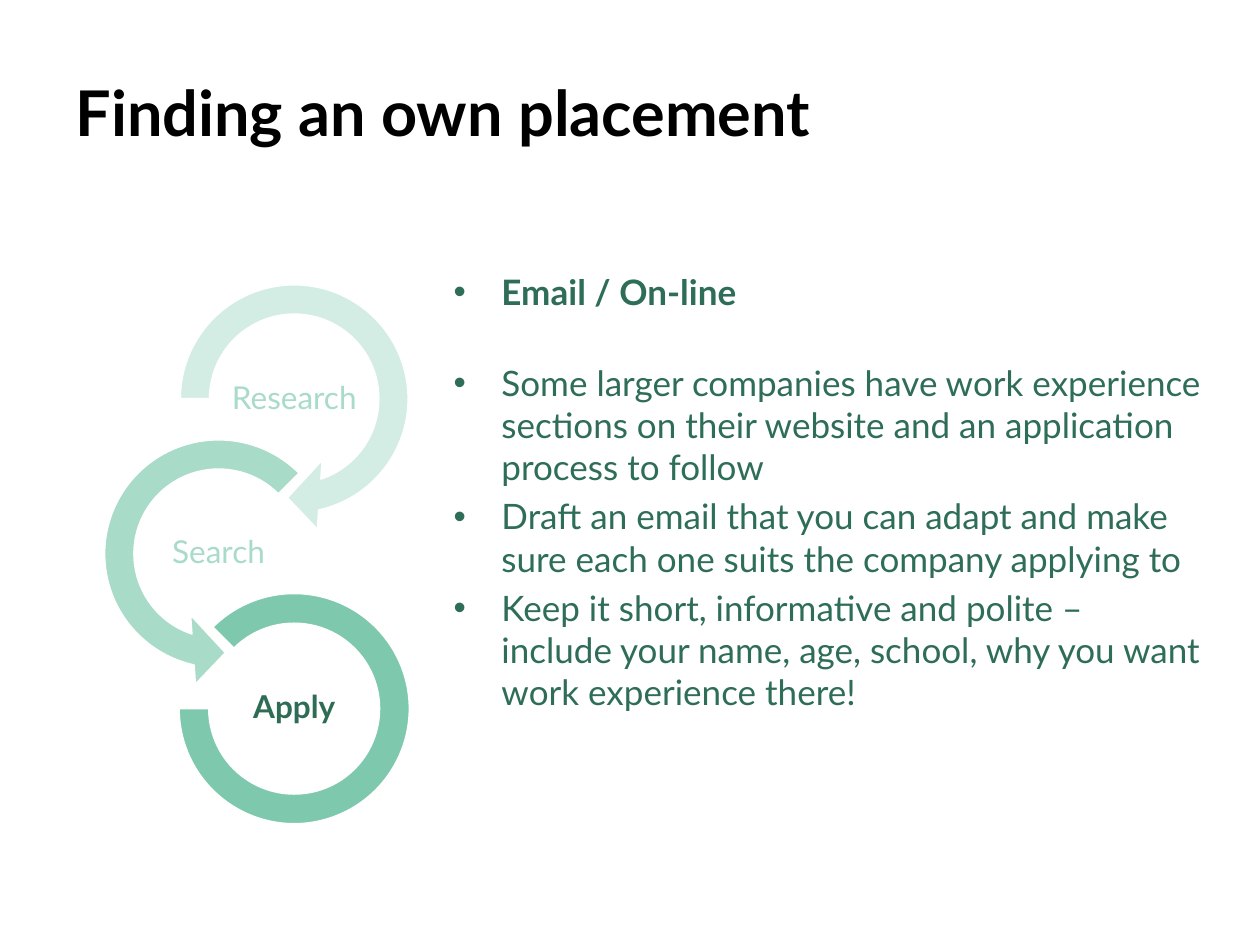
from dataclasses import dataclass

from pptx import Presentation
from pptx.dml.color import RGBColor
from pptx.enum.shapes import MSO_SHAPE
from pptx.enum.text import MSO_ANCHOR, MSO_AUTO_SIZE, PP_ALIGN
from pptx.util import Inches, Pt


@dataclass(frozen=True)
class Theme:
    font: str = "Lato"
    black: str = "000000"
    white: str = "FFFFFF"
    pale: str = "D4EDE4"
    light: str = "A9DBC9"
    medium: str = "7EC9AE"
    label: str = "2E6C56"
    body: str = "2E6D57"
    title_size: int = 36
    body_size: int = 20
    label_size: int = 18


@dataclass(frozen=True)
class Box:
    """A rectangle in inches."""
    left: float
    top: float
    width: float
    height: float

    def lengths(self):
        return [Inches(v) for v in (self.left, self.top, self.width, self.height)]


THEME = Theme()
TITLE = "Finding an own placement"
HEADING = "Email / On-line"
ADVICE = [
    "Some larger companies have work experience sections on their website "
    "and an application process to follow",
    "Draft an email that you can adapt and make sure each one suits the "
    "company applying to",
    "Keep it short, informative and polite – include your name, age, school, "
    "why you want work experience there!",
]
# label, shape, adjustments, diameter as share of cycle width, column,
# fill, label colour, bold
STEPS = [
    ("Research", MSO_SHAPE.CIRCULAR_ARROW, (0.11, 11.42, 45, 108, 0.13),
     0.78, 1, THEME.pale, THEME.light, False),
    ("Search", MSO_SHAPE.LEFT_CIRCULAR_ARROW, (0.11, 11.42, 63, 189, 0.13),
     0.78, 0, THEME.light, THEME.light, False),
    ("Apply", MSO_SHAPE.BLOCK_ARC, (135, 108, 0.13),
     0.67, 1, THEME.medium, THEME.label, True),
]


def set_all(target, values):
    for name, value in values.items():
        setattr(target, name, value)


def write(paragraph, text, size, color, bold, **spacing):
    run = paragraph.add_run()
    run.text = text
    set_all(run.font, {"name": THEME.font, "size": Pt(size), "bold": bold})
    run.font.color.rgb = RGBColor.from_string(color)
    set_all(paragraph, spacing)


def place(shape, box):
    set_all(shape, dict(zip(("left", "top", "width", "height"), box.lengths())))


def add_title(slide, box):
    title = slide.shapes.title
    place(title, box)
    set_all(title.text_frame, {"vertical_anchor": MSO_ANCHOR.TOP,
                               "auto_size": MSO_AUTO_SIZE.NONE})
    write(title.text_frame.paragraphs[0], TITLE, THEME.title_size, THEME.black,
          True, alignment=PP_ALIGN.LEFT, line_spacing=0.9)


def add_advice(slide, box):
    body = slide.placeholders[1]
    place(body, box)
    frame = body.text_frame
    frame.auto_size = MSO_AUTO_SIZE.NONE
    for index, text in enumerate([HEADING, *ADVICE]):
        is_heading = index == 0
        paragraph = frame.paragraphs[0] if is_heading else frame.add_paragraph()
        write(paragraph, text, THEME.body_size, THEME.body, is_heading,
              space_before=Pt(4), space_after=Pt(24 if is_heading else 0))
        properties = paragraph._p.get_or_add_pPr()
        properties.set("marL", str(Inches(0.38)))
        properties.set("indent", str(-Inches(0.38)))


def add_label(group, box, text, color, bold):
    label = group.shapes.add_textbox(*box.lengths())
    margins = dict.fromkeys(("margin_left", "margin_right", "margin_top",
                             "margin_bottom"), Inches(0.01))
    set_all(label.text_frame, {"word_wrap": True,
                               "vertical_anchor": MSO_ANCHOR.MIDDLE, **margins})
    write(label.text_frame.paragraphs[0], text, THEME.label_size, color, bold,
          alignment=PP_ALIGN.CENTER, line_spacing=0.9)


def add_cycle(slide, box):
    """Chain three staggered rings, each centred on its own row."""
    group = slide.shapes.add_group_shape()
    first_diameter = box.width * STEPS[0][3]
    row_step = box.height * 0.277
    column_step = box.width - first_diameter
    label_width, label_height = 1.19, 0.59
    for row, (text, kind, adjustments, share, column, fill, color, bold) in enumerate(STEPS):
        diameter = box.width * share
        center_x = box.left + first_diameter / 2 + column * column_step
        center_y = box.top + first_diameter / 2 + row * row_step
        ring = group.shapes.add_shape(kind, *Box(
            center_x - diameter / 2, center_y - diameter / 2,
            diameter, diameter).lengths())
        ring.shadow.inherit = False
        ring.fill.solid()
        ring.fill.fore_color.rgb = RGBColor.from_string(fill)
        ring.line.color.rgb = RGBColor.from_string(THEME.white)
        ring.line.width = Pt(1)
        for index, value in enumerate(adjustments):
            ring.adjustments[index] = value
        add_label(group, Box(center_x - label_width / 2, center_y - label_height / 2,
                             label_width, label_height), text, color, bold)


def main():
    presentation = Presentation()
    set_all(presentation, {"slide_width": Inches(10), "slide_height": Inches(7.5)})
    slide = presentation.slides.add_slide(presentation.slide_layouts[1])
    add_title(slide, Box(0.5, 0.6, 8.74, 1.24))
    add_cycle(slide, Box(0.67, 2.1, 2.73, 4.44))
    add_advice(slide, Box(3.5, 2.1, 6.14, 4.01))
    presentation.save("out.pptx")


if __name__ == "__main__":
    main()
